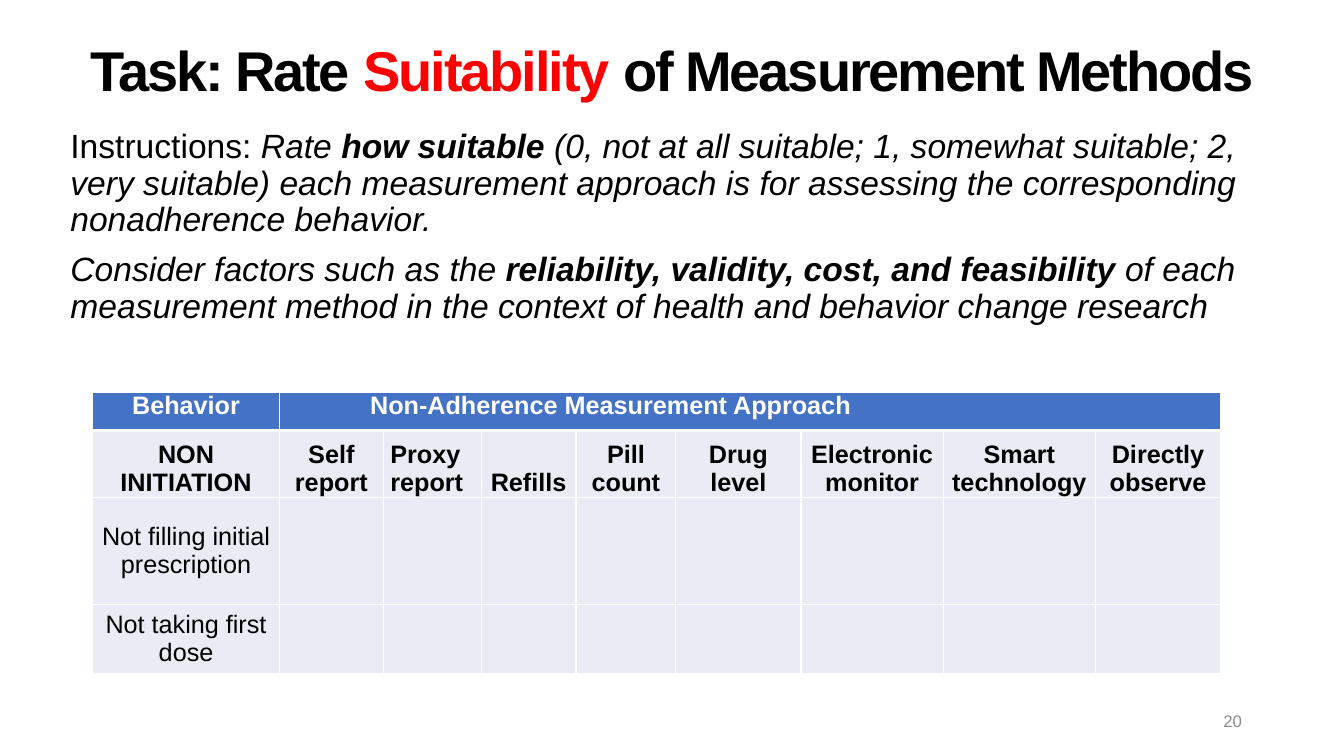
from lxml.etree import SubElement
from pptx import Presentation
from pptx.dml.color import RGBColor
from pptx.enum.text import MSO_ANCHOR, MSO_AUTO_SIZE, PP_ALIGN
from pptx.oxml.ns import qn
from pptx.util import Inches, Pt

SLIDE_WIDTH, SLIDE_HEIGHT = Inches(13.33), Inches(7.5)
BLACK, WHITE, RED, GREY = "000000", "FFFFFF", "FF0000", "8C8C8C"
HEADER_BLUE, BODY_BLUE = "4472C4", "E9EBF5"
COLUMN_SHARES = [1.85, 1.03, 0.97, 0.94, 0.99, 1.24, 1.41, 1.51, 1.24]
ROW_SHARES = [0.38, 0.66, 1.06, 0.68]
METHODS = ["Self report", "Proxy report", "Refills", "Pill count", "Drug level",
           "Electronic monitor", "Smart technology", "Directly observe"]
BEHAVIORS = ["Not filling initial prescription", "Not taking first dose"]


def percent_box(left, top, width, height):
    """Turn percentages of the slide's size into lengths."""
    return tuple(int(share * side / 100) for share, side in
                 zip((left, top, width, height), (SLIDE_WIDTH, SLIDE_HEIGHT) * 2))


def color(hex_code):
    """Return the colour for a hex string."""
    return RGBColor.from_string(hex_code)


def write(frame, paragraphs, size=18, ink=BLACK, bold=False, italic=False,
          align=PP_ALIGN.LEFT, anchor=MSO_ANCHOR.TOP, line=None, before=None, tracking=None):
    """Fill a text frame with paragraphs of (text, format changes) runs."""
    frame.word_wrap = True
    frame.vertical_anchor = anchor
    for index, runs in enumerate(paragraphs):
        paragraph = frame.paragraphs[0] if index == 0 else frame.add_paragraph()
        paragraph.alignment = align
        paragraph.line_spacing = line
        paragraph.space_before = before
        for words, changes in runs:
            run = paragraph.add_run()
            run.text = words
            run.font.name = "Arial"
            run.font.size = Pt(size)
            run.font.bold = changes.get("bold", bold)
            run.font.italic = changes.get("italic", italic)
            run.font.color.rgb = color(changes.get("ink", ink))
            if tracking is not None:
                run._r.get_or_add_rPr().set("spc", str(int(tracking * 100)))


def add_title(slide, box):
    """Place and write the title."""
    title = slide.shapes.title
    title.left, title.top, title.width, title.height = box
    title.text_frame.auto_size = MSO_AUTO_SIZE.NONE
    write(title.text_frame,
          [[("Task: Rate ", {}), ("Suitability", {"ink": RED}), (" of Measurement Methods", {})]],
          size=40, bold=True, align=PP_ALIGN.CENTER, anchor=MSO_ANCHOR.MIDDLE,
          line=0.9, tracking=-1.5)


def add_instructions(slide, box):
    """Write the two paragraphs of instructions."""
    frame = slide.shapes.add_textbox(*box).text_frame
    strong = {"bold": True}
    write(frame, [
        [("Instructions: ", {"italic": False}), ("Rate ", {}), ("how suitable", strong),
         (" (0, not at all suitable; 1, somewhat suitable; 2, very suitable) each measurement "
          "approach is for assessing the corresponding nonadherence behavior.", {})],
        [("Consider factors such as the ", {}),
         ("reliability, validity, cost, and feasibility ", strong),
         ("of each measurement method in the context of health and behavior change research", {})],
    ], size=24, italic=True, line=0.9, before=Pt(10))
    frame.auto_size = MSO_AUTO_SIZE.SHAPE_TO_FIT_TEXT


def style_cell(cell, fill, bottom_width=1, top_width=1):
    """Give a cell its margins, white borders and fill."""
    cell.margin_left = cell.margin_right = Inches(0.07)
    cell.margin_top = cell.margin_bottom = 0
    properties = cell._tc.get_or_add_tcPr()
    for side, width in (("L", 1), ("R", 1), ("T", top_width), ("B", bottom_width)):
        border = SubElement(properties, qn(f"a:ln{side}"), w=str(Pt(width)))
        SubElement(SubElement(border, qn("a:solidFill")), qn("a:srgbClr"), val=WHITE)
    cell.fill.solid()
    cell.fill.fore_color.rgb = color(fill)


def add_ratings(slide, box):
    """Build the table of behaviors against measurement methods."""
    table = slide.shapes.add_table(len(ROW_SHARES), len(COLUMN_SHARES), *box).table
    for column, share in zip(table.columns, COLUMN_SHARES):
        column.width = int(box[2] * share / sum(COLUMN_SHARES))
    for row_index, (row, share) in enumerate(zip(table.rows, ROW_SHARES)):
        row.height = int(box[3] * share / sum(ROW_SHARES))
        for cell in row.cells:
            style_cell(cell, HEADER_BLUE if row_index == 0 else BODY_BLUE,
                       bottom_width=3 if row_index == 0 else 1,
                       top_width=3 if row_index == 1 else 1)

    approach = table.cell(0, 1)
    approach.merge(table.cell(0, len(METHODS)))
    approach.margin_left = Inches(0.9)
    write(table.cell(0, 0).text_frame, [[("Behavior", {})]],
          ink=WHITE, bold=True, align=PP_ALIGN.CENTER)
    write(approach.text_frame, [[("Non-Adherence Measurement Approach", {})]],
          ink=WHITE, bold=True)

    headings = [["NON", "INITIATION"]] + [[method] for method in METHODS]
    for column_index, lines in enumerate(headings):
        heading = table.cell(1, column_index)
        write(heading.text_frame, [[(words, {})] for words in lines], bold=True,
              align=PP_ALIGN.LEFT if lines == ["Proxy report"] else PP_ALIGN.CENTER)
        heading.vertical_anchor = MSO_ANCHOR.BOTTOM
    for row_index, behavior in enumerate(BEHAVIORS, start=2):
        label = table.cell(row_index, 0)
        write(label.text_frame, [[(behavior, {})]], align=PP_ALIGN.CENTER)
        label.vertical_anchor = MSO_ANCHOR.MIDDLE


def add_page_number(slide, box):
    """Write the page number at the lower right."""
    write(slide.shapes.add_textbox(*box).text_frame, [[("20", {})]], size=12, ink=GREY,
          align=PP_ALIGN.RIGHT, anchor=MSO_ANCHOR.MIDDLE)


def main():
    """Build and save the slide."""
    presentation = Presentation()
    presentation.slide_width, presentation.slide_height = SLIDE_WIDTH, SLIDE_HEIGHT
    slide = presentation.slides.add_slide(presentation.slide_layouts.get_by_name("Title Only"))
    add_title(slide, percent_box(0, 0, 100, 19.33))
    add_ratings(slide, percent_box(6.9, 51.87, 83.93, 37.2))
    add_page_number(slide, percent_box(70.65, 92.67, 22.5, 5.33))
    add_instructions(slide, percent_box(4.5, 16.53, 88.58, 27.47))
    presentation.save("out.pptx")


if __name__ == "__main__":
    main()
